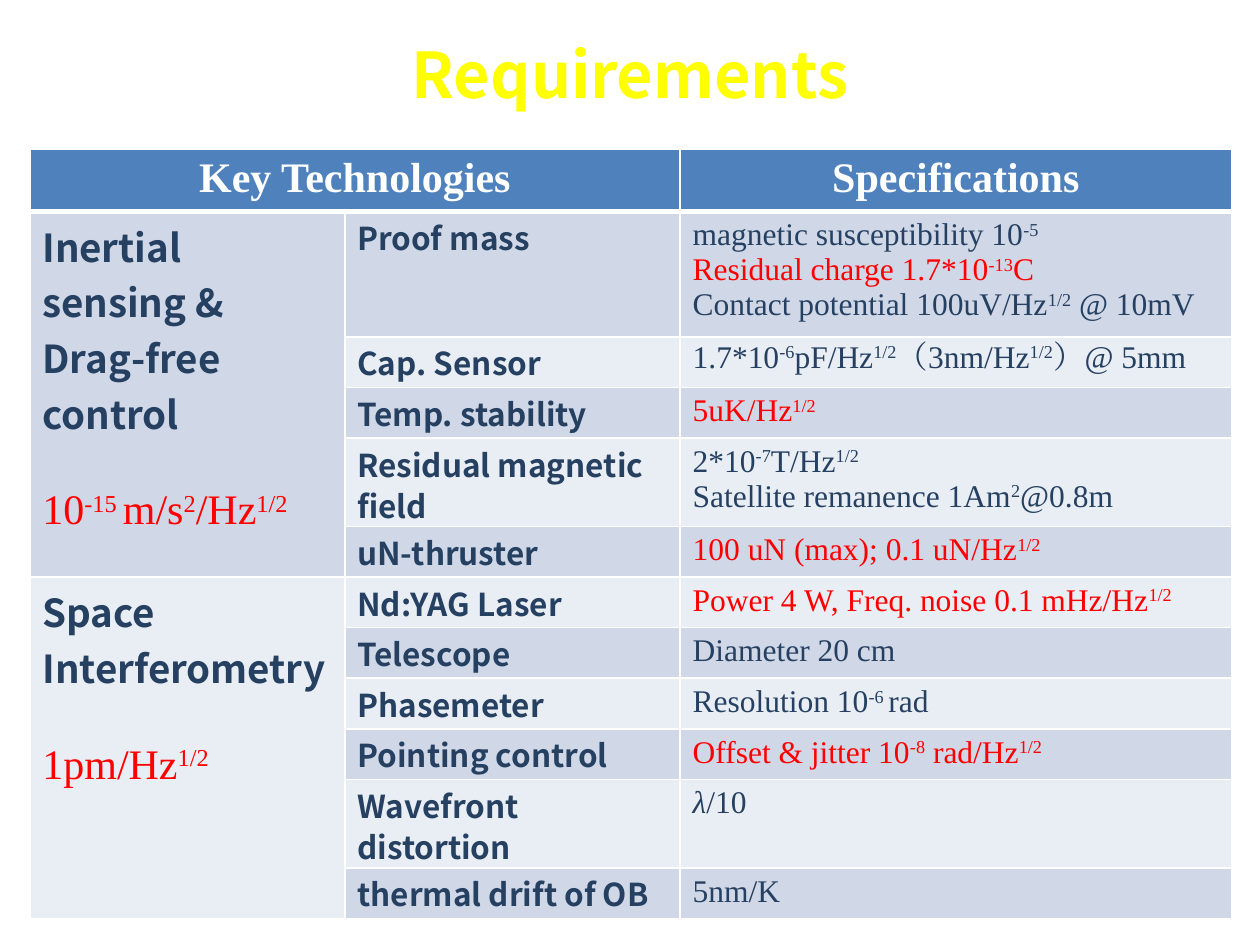
from dataclasses import dataclass

from lxml import etree
from pptx import Presentation
from pptx.dml.color import RGBColor
from pptx.enum.text import MSO_ANCHOR, MSO_AUTO_SIZE, PP_ALIGN
from pptx.oxml.ns import qn
from pptx.util import Cm, Pt

CENTER, LEFT = PP_ALIGN.CENTER, PP_ALIGN.LEFT
MIDDLE = MSO_ANCHOR.MIDDLE
NO_FIT = MSO_AUTO_SIZE.NONE

SANS, SERIF = "Noto Sans CJK SC", "Times New Roman"
COLORS = {
    "title": "FFFF00", "white": "FFFFFF", "head": "4F81BD",
    "dark": "D0D8E8", "light": "E9EDF4", "navy": "254061", "red": "FF0000",
}
COLS = (6.35, 6.76, 11.12)
HEAD_H, ROW_H = 1.26, 1.02


@dataclass
class Style:
    font: str
    size: float
    color: str
    bold: bool = False
    align: PP_ALIGN = LEFT
    before: float = 0
    pitch: float = 1.0


@dataclass
class Line:
    """Text with ^superscript^ and _italic_ marks."""
    text: str
    red: bool = False


@dataclass
class Item:
    name: str
    specs: list[Line]
    height: float = ROW_H


@dataclass
class Group:
    name: str
    goal: str
    items: list[Item]


TITLE = Style(SANS, 36, "title", True, CENTER)
HEAD = Style(SERIF, 24, "white", True, CENTER)
GROUP = Style(SANS, 22, "navy", True)
GOAL = Style(SERIF, 24, "red", before=27)
NAME = Style(SANS, 18, "navy", True, pitch=0.9)
SPEC = Style(SERIF, 18, "navy")
ALERT = Style(SERIF, 18, "red")
WIDE = Style(SERIF, 18, "navy", pitch=0.9)

GROUPS = [
    Group("Inertial sensing & Drag-free control", "10^-15 ^m/s^2^/Hz^1/2^", [
        Item("Proof mass", [
            Line("magnetic susceptibility 10^-5^"),
            Line("Residual charge 1.7*10^-13^C", True),
            Line("Contact potential 100uV/Hz^1/2^ @ 10mV"),
        ], 2.53),
        Item("Cap. Sensor", [Line("1.7*10^-6^pF/Hz^1/2^（3nm/Hz^1/2^）@ 5mm")]),
        Item("Temp. stability", [Line("5uK/Hz^1/2^", True)]),
        Item("Residual magnetic field", [
            Line("2*10^-7^T/Hz^1/2^"),
            Line("Satellite remanence 1Am^2^@0.8m"),
        ], 1.77),
        Item("uN-thruster", [Line("100 uN (max); 0.1 uN/Hz^1/2^", True)]),
    ]),
    Group("Space Interferometry", "1pm/Hz^1/2^", [
        Item("Nd:YAG Laser", [Line("Power 4 W, Freq. noise 0.1 mHz/Hz^1/2^", True)]),
        Item("Telescope", [Line("Diameter 20 cm")]),
        Item("Phasemeter", [Line("Resolution 10^-6 ^rad")]),
        Item("Pointing control", [Line("Offset & jitter 10^-8^ rad/Hz^1/2^", True)]),
        Item("Wavefront distortion", [Line("_λ_/10")], 1.77),
        Item("thermal drift of OB", [Line("5nm/K")]),
    ]),
]


def rgb(key: str) -> RGBColor:
    return RGBColor.from_string(COLORS[key])


def add_run(para, text: str, style: Style, sup: bool, slant: bool) -> None:
    run = para.add_run()
    run.text = text
    font = run.font
    font.name, font.size = style.font, Pt(style.size)
    font.bold, font.italic = style.bold, slant
    font.color.rgb = rgb(style.color)
    props = run._r.get_or_add_rPr()
    if sup:
        props.set("baseline", "30000")
    etree.SubElement(props, qn("a:ea")).set("typeface", style.font)


def write(frame, lines: list[tuple[str, Style]]) -> None:
    frame.word_wrap = True
    for i, (text, style) in enumerate(lines):
        para = frame.add_paragraph() if i else frame.paragraphs[0]
        para.alignment = style.align
        para.line_spacing = style.pitch
        para.space_before = Pt(style.before)
        for j, part in enumerate(text.split("^")):
            for k, piece in enumerate(part.split("_")):
                if piece:
                    add_run(para, piece, style, j % 2 == 1, k % 2 == 1)


def paint(cell, fill: str, base: float = 1) -> None:
    """Give a cell white borders, the lower one base points wide, and a fill."""
    props = cell._tc.get_or_add_tcPr()
    for side, width in (("L", 1), ("R", 1), ("T", 1), ("B", base)):
        line = etree.SubElement(props, qn(f"a:ln{side}"), w=str(Pt(width)))
        solid = etree.SubElement(line, qn("a:solidFill"))
        etree.SubElement(solid, qn("a:srgbClr"), val=COLORS["white"])
    cell.fill.solid()
    cell.fill.fore_color.rgb = rgb(fill)


def pick(line: Line) -> Style:
    if "（" in line.text:
        return WIDE
    return ALERT if line.red else SPEC


def add_title(slide) -> None:
    title = slide.shapes.title
    title.left, title.top = Cm(0), Cm(0.58)
    title.width, title.height = Cm(25.4), Cm(1.8)
    frame = title.text_frame
    frame.auto_size = NO_FIT
    frame.vertical_anchor = MIDDLE
    write(frame, [("Requirements", TITLE)])


def add_grid(slide) -> None:
    items = [item for group in GROUPS for item in group.items]
    heights = [HEAD_H] + [item.height for item in items]
    table = slide.shapes.add_table(
        len(heights), len(COLS), Cm(0.6), Cm(3),
        Cm(sum(COLS)), Cm(sum(heights))).table
    for col, width in zip(table.columns, COLS):
        col.width = Cm(width)
    for row, height in zip(table.rows, heights):
        row.height = Cm(height)

    for c in range(len(COLS)):
        paint(table.cell(0, c), "head", 3)
    table.cell(0, 0).merge(table.cell(0, 1))
    write(table.cell(0, 0).text_frame, [("Key Technologies", HEAD)])
    write(table.cell(0, 2).text_frame, [("Specifications", HEAD)])

    for r, item in enumerate(items, 1):
        for c in range(len(COLS)):
            cell = table.cell(r, c)
            paint(cell, "dark" if r % 2 else "light")
            cell.margin_bottom = Cm(0)
        write(table.cell(r, 1).text_frame, [(item.name, NAME)])
        write(table.cell(r, 2).text_frame,
              [(line.text, pick(line)) for line in item.specs])

    top = 1
    for group in GROUPS:
        end = top + len(group.items)
        cell = table.cell(top, 0)
        cell.merge(table.cell(end - 1, 0))
        write(cell.text_frame, [(group.name, GROUP), (group.goal, GOAL)])
        top = end


def main() -> None:
    deck = Presentation()
    deck.slide_width, deck.slide_height = Cm(25.4), Cm(19.05)
    slide = deck.slides.add_slide(deck.slide_layouts[5])
    add_title(slide)
    add_grid(slide)
    deck.save("out.pptx")


if __name__ == "__main__":
    main()
